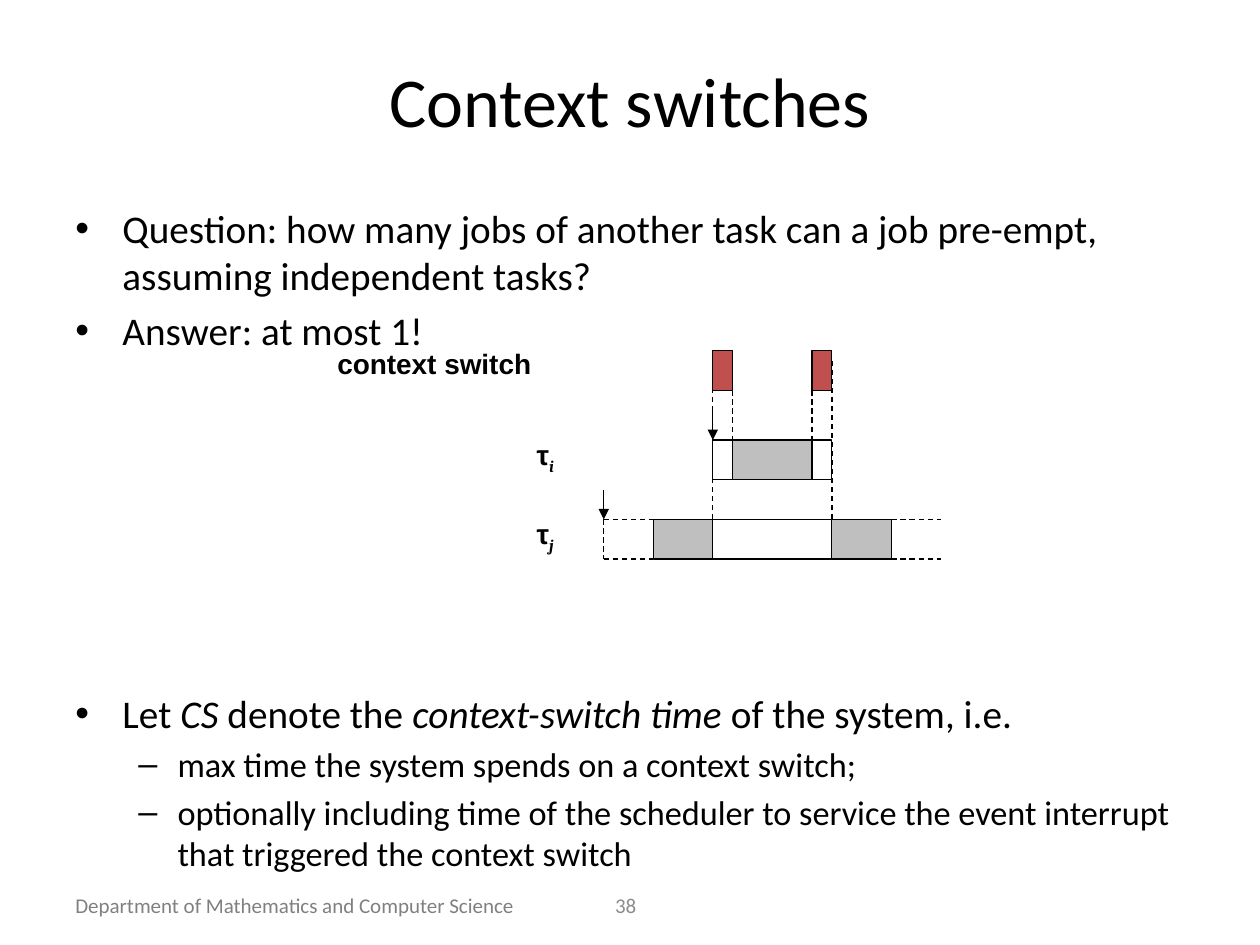
from typing import NamedTuple

from lxml import etree
from pptx import Presentation
from pptx.dml.color import RGBColor
from pptx.enum.dml import MSO_LINE
from pptx.enum.shapes import MSO_CONNECTOR, MSO_SHAPE
from pptx.enum.text import MSO_ANCHOR, PP_ALIGN
from pptx.oxml.ns import qn
from pptx.util import Cm, Pt

DASH = MSO_LINE.DASH
STRAIGHT = MSO_CONNECTOR.STRAIGHT
RECTANGLE = MSO_SHAPE.RECTANGLE
TOP, MIDDLE = MSO_ANCHOR.TOP, MSO_ANCHOR.MIDDLE
LEFT, CENTER = PP_ALIGN.LEFT, PP_ALIGN.CENTER

COLORS = {
    "text": "000000",
    "footer": "808080",
    "number": "8C8C8C",
    "running": "BFBFBF",
    "switch": "C0504D",
    "idle": "FFFFFF",
}

# Time axis and rows of the schedule, in centimetres
UNIT = 0.4
BAR_HEIGHT = 2 * UNIT
RELEASE_J = 12.17
START_J = RELEASE_J + 2.5 * UNIT
START_I = START_J + 3 * UNIT
RUN_I = START_I + UNIT
STOP_I = RUN_I + 4 * UNIT
END_I = STOP_I + UNIT
END_J = END_I + 3 * UNIT
TAIL_J = END_J + 2.5 * UNIT
SWITCH_ROW, I_ROW, J_ROW = 7.07, 8.87, 10.47


class Bar(NamedTuple):
    start: float
    end: float
    row: float
    color: str


class Line(NamedTuple):
    x1: float
    y1: float
    x2: float
    y2: float
    arrow: bool = False


class Label(NamedTuple):
    text: str
    left: float
    top: float
    width: float
    height: float
    size: float
    font: str = "Calibri"
    color: str = "text"
    bold: bool = False
    align: PP_ALIGN = LEFT
    anchor: MSO_ANCHOR = TOP
    subscript: str = ""


class Bullet(NamedTuple):
    spans: tuple[str, ...]  # every second span is italic
    level: int = 0
    space_before: float = 0


class BulletStyle(NamedTuple):
    mark: str
    size: float
    indent: float
    hanging: float


BULLET_STYLES = (
    BulletStyle("•", 22.4, 0.95, 0.95),
    BulletStyle("–", 19.6, 2.06, 0.79),
)

LABELS = (
    Label("Department of Mathematics and Computer Science",
          1.27, 17.86, 9.96, 0.76, 12, color="footer"),
    Label("Context switches", 1.27, 0.76, 22.86, 2.49, 40,
          align=CENTER, anchor=MIDDLE),
    Label("38", 11.23, 17.86, 2.77, 0.76, 12, color="number",
          align=CENTER, anchor=MIDDLE),
    Label("context switch", 6.55, 6.86, 5.41, 1.22, 16, "Arial", bold=True),
    Label("τ", 10.57, 8.69, 1.4, 0.94, 16, "Arial", bold=True, subscript="i"),
    Label("τ", 10.57, 10.29, 1.4, 0.94, 16, "Arial", bold=True, subscript="j"),
)

BULLETS = (
    Bullet(("Question: how many jobs of another task can a job pre-empt, "
            "assuming independent tasks?",)),
    Bullet(("Answer: at most 1!",), space_before=4.5),
    Bullet(("Let ", "CS", " denote the ", "context-switch time ",
            "of the system, i.e."), space_before=192),
    Bullet(("max time the system spends on a context switch;",), 1, 3.9),
    Bullet(("optionally including time of the scheduler to service the event "
            "interrupt that triggered the context switch",), 1, 3.9),
)

LINES = (
    *(Line(x, row - 1.5 * UNIT, x, row, arrow=True)
      for x, row in ((RELEASE_J, J_ROW), (START_I, I_ROW))),
    *(Line(x, SWITCH_ROW + UNIT / 2, x, J_ROW) for x in (START_I, END_I)),
    *(Line(x, SWITCH_ROW + BAR_HEIGHT, x, I_ROW + UNIT)
      for x in (RUN_I, STOP_I)),
    *(Line(start, y, end, y)
      for start, end in ((RELEASE_J, START_J), (END_J, TAIL_J))
      for y in (J_ROW, J_ROW + BAR_HEIGHT)),
    Line(RELEASE_J, J_ROW, RELEASE_J, J_ROW + BAR_HEIGHT),
)

SWITCHES = ((START_I, RUN_I), (STOP_I, END_I))
BARS = (
    Bar(START_J, START_I, J_ROW, "running"),
    Bar(END_I, END_J, J_ROW, "running"),
    Bar(START_I, END_I, J_ROW, "idle"),
    Bar(RUN_I, STOP_I, I_ROW, "running"),
    *(Bar(start, end, row, color) for start, end in SWITCHES
      for row, color in ((SWITCH_ROW, "switch"), (I_ROW, "idle"))),
)


def rgb(name: str) -> RGBColor:
    return RGBColor.from_string(COLORS[name])


def style_run(run, font: str, size: float, color: str) -> None:
    run.font.name = font
    run.font.size = Pt(size)
    run.font.color.rgb = rgb(color)


def add_label(page, label: Label) -> None:
    box = page.shapes.add_textbox(Cm(label.left), Cm(label.top),
                                  Cm(label.width), Cm(label.height))
    frame = box.text_frame
    frame.word_wrap = True
    frame.vertical_anchor = label.anchor
    frame.text = label.text
    para = frame.paragraphs[0]
    para.alignment = label.align
    style_run(para.runs[0], label.font, label.size, label.color)
    para.runs[0].font.bold = label.bold
    if label.subscript:
        span = para.add_run()
        span.text = label.subscript
        style_run(span, "Cambria", label.size, label.color)
        span.font.bold = span.font.italic = True
        span._r.get_or_add_rPr().set("baseline", "-25000")


def add_bullets(page, bullets: tuple[Bullet, ...]) -> None:
    box = page.shapes.add_textbox(Cm(1.27), Cm(3.99), Cm(22.86), Cm(12.95))
    frame = box.text_frame
    frame.word_wrap = True
    for index, bullet in enumerate(bullets):
        para = frame.add_paragraph() if index else frame.paragraphs[0]
        style = BULLET_STYLES[bullet.level]
        properties = para._p.get_or_add_pPr()
        properties.set("marL", str(Cm(style.indent)))
        properties.set("indent", str(-Cm(style.hanging)))
        etree.SubElement(properties, qn("a:buFont")).set("typeface", "Arial")
        etree.SubElement(properties, qn("a:buChar")).set("char", style.mark)
        para.level = bullet.level
        para.space_before = Pt(bullet.space_before)
        for position, text in enumerate(bullet.spans):
            span = para.add_run()
            span.text = text
            style_run(span, "Calibri", style.size, "text")
            span.font.italic = position % 2 == 1


def add_line(page, line: Line) -> None:
    connector = page.shapes.add_connector(STRAIGHT, Cm(line.x1), Cm(line.y1),
                                          Cm(line.x2), Cm(line.y2))
    connector.line.color.rgb = rgb("text")
    connector.line.width = Pt(0.75)
    if line.arrow:
        outline = connector.line._get_or_add_ln()
        etree.SubElement(outline, qn("a:tailEnd")).set("type", "triangle")
    else:
        connector.line.dash_style = DASH
    etree.SubElement(connector._element.spPr, qn("a:effectLst"))


def add_bar(page, bar: Bar) -> None:
    shape = page.shapes.add_shape(RECTANGLE, Cm(bar.start), Cm(bar.row),
                                  Cm(bar.end - bar.start), Cm(BAR_HEIGHT))
    shape.shadow.inherit = False
    shape.fill.solid()
    shape.fill.fore_color.rgb = rgb(bar.color)
    shape.line.color.rgb = rgb("text")
    shape.line.width = Pt(0.75)


def main() -> None:
    deck = Presentation()
    deck.slide_width, deck.slide_height = Cm(25.4), Cm(19.05)
    page = deck.slides.add_slide(deck.slide_layouts[6])
    add_bullets(page, BULLETS)
    for draw, items in ((add_line, LINES), (add_bar, BARS), (add_label, LABELS)):
        for item in items:
            draw(page, item)
    deck.save("out.pptx")


if __name__ == "__main__":
    main()
